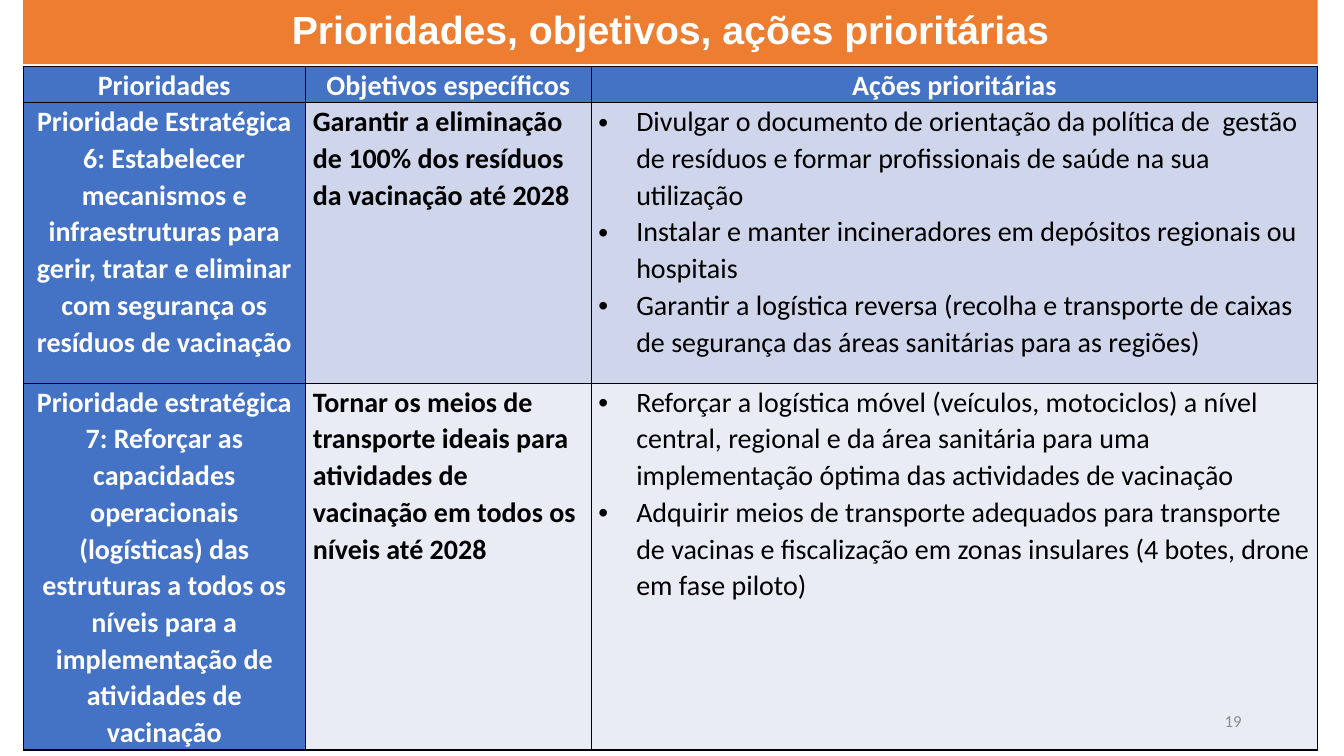
from dataclasses import dataclass

from lxml.etree import SubElement
from pptx import Presentation
from pptx.dml.color import RGBColor
from pptx.enum.text import MSO_ANCHOR, PP_ALIGN
from pptx.oxml.ns import qn
from pptx.util import Pt

SCALE = 9525


@dataclass(frozen=True)
class Theme:
    """Colours, fonts and type sizes of the slide."""
    orange: str = "ED7D31"
    blue: str = "4472C4"
    bands: tuple = ("CFD5EA", "E9EBF5")
    white: str = "FFFFFF"
    black: str = "000000"
    gray: str = "8C8C8C"
    head: str = "Arial"
    body: str = "Calibri"
    large: int = 28
    normal: int = 20
    small: int = 12


THEME = Theme()
HEADS = ["Prioridades", "Objetivos específicos", "Ações prioritárias"]
PLANS = [
    ("Prioridade Estratégica 6: Estabelecer mecanismos e infraestruturas para gerir, "
     "tratar e eliminar com segurança os resíduos de vacinação",
     "Garantir a eliminação de 100% dos resíduos da vacinação até 2028",
     ["Divulgar o documento de orientação da política de  gestão de resíduos e formar "
      "profissionais de saúde na sua utilização",
      "Instalar e manter incineradores em depósitos regionais ou hospitais",
      "Garantir a logística reversa (recolha e transporte de caixas de segurança das "
      "áreas sanitárias para as regiões)"]),
    ("Prioridade estratégica 7: Reforçar as capacidades operacionais (logísticas) das "
     "estruturas a todos os níveis para a implementação de atividades de vacinação",
     "Tornar os meios de transporte ideais para atividades de vacinação em todos os "
     "níveis até 2028",
     ["Reforçar a logística móvel (veículos, motociclos) a nível central, regional e da "
      "área sanitária para uma implementação óptima das actividades de vacinação",
      "Adquirir meios de transporte adequados para transporte de vacinas e fiscalização "
      "em zonas insulares (4 botes, drone em fase piloto)"]),
]


def px(*nums):
    """Turn pixel lengths into EMU."""
    return [num * SCALE for num in nums]


def paint(item, tone):
    """Give a shape or cell a solid fill."""
    item.fill.solid()
    item.fill.fore_color.rgb = RGBColor.from_string(tone)


def write(para, text, size, tone, face, bold=False, align=PP_ALIGN.LEFT):
    """Add one formatted run to a paragraph."""
    para.alignment = align
    run = para.add_run()
    run.text = text
    run.font.size = Pt(size)
    run.font.name = face
    run.font.bold = bold
    run.font.color.rgb = RGBColor.from_string(tone)


def bullet(para, indent):
    """Hang a round bullet in front of a paragraph."""
    props = para._p.get_or_add_pPr()
    props.set("marL", str(indent * SCALE))
    props.set("indent", str(-indent * SCALE))
    SubElement(props, qn("a:buFont"), typeface="Arial")
    SubElement(props, qn("a:buChar"), char="•")


def edge(cell):
    """Draw a thin black border on all sides of a cell."""
    props = cell._tc.get_or_add_tcPr()
    for side in ("lnL", "lnR", "lnT", "lnB"):
        line = SubElement(props, qn(f"a:{side}"), w=str(Pt(1)))
        fill = SubElement(line, qn("a:solidFill"))
        SubElement(fill, qn("a:srgbClr"), val=THEME.black)


def fill_cell(cell, text, back, tone, bold=True, align=PP_ALIGN.LEFT):
    """Fill a cell with one paragraph, or with bullets when given a list."""
    edge(cell)
    paint(cell, back)
    cell.margin_left, cell.margin_right, cell.margin_top, cell.margin_bottom = px(7, 7, 0, 0)
    listed = isinstance(text, list)
    frame = cell.text_frame
    for place, line in enumerate(text if listed else [text]):
        para = frame.add_paragraph() if place else frame.paragraphs[0]
        para.line_spacing = 1.07
        para.space_before = Pt(0 if listed else 12)
        para.space_after = Pt(0 if listed else 8)
        if listed:
            bullet(para, 36)
        write(para, line, THEME.normal, tone, THEME.body, bold, align)


def add_title(slide, box):
    """Place the orange title band."""
    title = slide.shapes.title
    title.left, title.top, title.width, title.height = px(*box)
    paint(title, THEME.orange)
    frame = title.text_frame
    frame.vertical_anchor = MSO_ANCHOR.MIDDLE
    para = frame.paragraphs[0]
    para.line_spacing = 0.9
    write(para, "Prioridades, objetivos, ações prioritárias", THEME.large,
          THEME.white, THEME.head, True, PP_ALIGN.CENTER)


def add_plan(slide, box):
    """Place the table of priorities, goals and actions."""
    wide, high = box[2:]
    table = slide.shapes.add_table(len(PLANS) + 1, len(HEADS), *px(*box)).table
    table.first_row = table.horz_banding = False
    for col, width in zip(table.columns, px(269, 272, wide - 541)):
        col.width = width
    for row, height in zip(table.rows, px(35, 267, high - 302)):
        row.height = height
    for col, head in enumerate(HEADS):
        fill_cell(table.cell(0, col), head, THEME.blue, THEME.white, align=PP_ALIGN.CENTER)
    for row, (plan, band) in enumerate(zip(PLANS, THEME.bands), 1):
        aim, goal, acts = plan
        fill_cell(table.cell(row, 0), aim, THEME.blue, THEME.white, align=PP_ALIGN.CENTER)
        fill_cell(table.cell(row, 1), goal, band, THEME.black)
        fill_cell(table.cell(row, 2), acts, band, THEME.black, False)


def add_page(slide, box):
    """Place the page number."""
    frame = slide.shapes.add_textbox(*px(*box)).text_frame
    frame.word_wrap = True
    frame.vertical_anchor = MSO_ANCHOR.MIDDLE
    write(frame.paragraphs[0], "19", THEME.small, THEME.gray, THEME.body,
          align=PP_ALIGN.RIGHT)


def main():
    """Build and save the slide."""
    deck = Presentation()
    deck.slide_width, deck.slide_height = px(1280, 720)
    slide = deck.slides.add_slide(deck.slide_layouts[5])
    add_title(slide, (22, 0, 1233, 61))
    add_plan(slide, (22, 63, 1233, 644))
    add_page(slide, (904, 667, 288, 38))
    deck.save("out.pptx")


if __name__ == "__main__":
    main()
